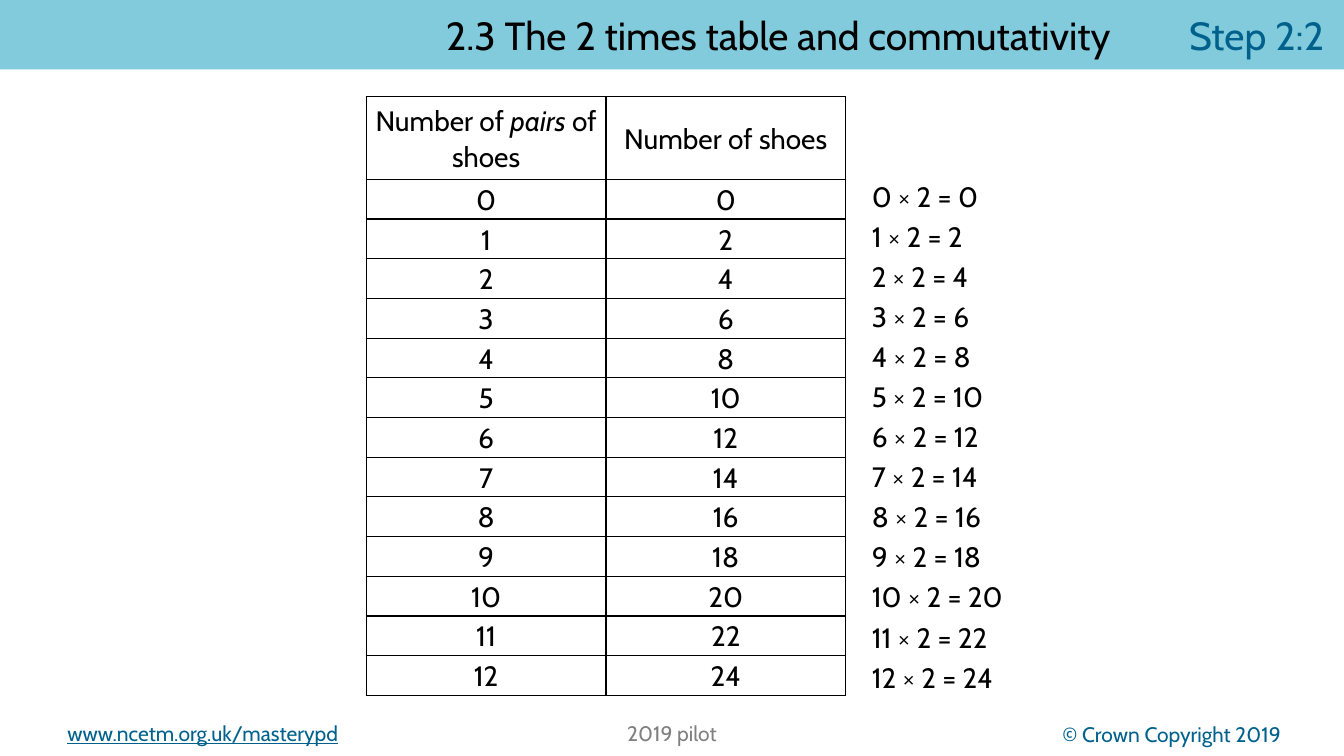
"""Build the slide on the 2 times table and commutativity."""
from dataclasses import dataclass

from lxml import etree
from pptx import Presentation
from pptx import util as u
from pptx.dml.color import RGBColor
from pptx.enum import text
from pptx.oxml import ns

BLACK = RGBColor(0x00, 0x00, 0x00)
BLUE = RGBColor(0x00, 0x62, 0x8C)
GREY = RGBColor(0x80, 0x80, 0x80)
SKY = RGBColor(0x82, 0xCB, 0xDD)
FACE = "Cabin"
FACTOR = 2
LAST = 12
ALIGN = text.PP_ALIGN
MIDDLE = text.MSO_ANCHOR.MIDDLE


@dataclass(frozen=True)
class Span:
    words: str
    color: RGBColor = BLACK
    slant: bool | None = None


@dataclass(frozen=True)
class Label:
    words: str
    left: float
    top: float
    width: float
    height: float
    size: float = 20
    color: RGBColor = BLACK
    align: text.PP_ALIGN = ALIGN.LEFT
    line: bool = False
    wrap: bool = True


FOOTERS = [
    Label("© Crown Copyright 2019", 22.28, 18.06, 10.25, 0.89, 15, BLUE, ALIGN.RIGHT),
    Label("www.ncetm.org.uk/masterypd", 1.45, 18.03, 10.41, 0.89, 15, BLUE, line=True),
    Label("2019 pilot", 11.73, 18.03, 10.41, 0.89, 15, GREY, ALIGN.CENTER),
]
HEADS = [
    [Span("Number of "), Span("pairs", slant=True), Span(" of shoes")],
    [Span("Number of shoes")],
]


def style(para, size: float, color: RGBColor, align: text.PP_ALIGN) -> None:
    """Set the font and alignment of a paragraph."""
    para.alignment = align
    para.font.name = FACE
    para.font.size = u.Pt(size)
    para.font.color.rgb = color


def add_spans(para, spans: list[Span]) -> None:
    """Add runs, marking only those that differ from the paragraph."""
    for span in spans:
        run = para.add_run()
        run.text = span.words
        if span.color != BLACK:
            run.font.color.rgb = span.color
        if span.slant:
            run.font.italic = True


def add_label(slide, label: Label) -> None:
    """Draw one line of text in its own box."""
    box = slide.shapes.add_textbox(
        u.Cm(label.left), u.Cm(label.top), u.Cm(label.width), u.Cm(label.height))
    frame = box.text_frame
    frame.word_wrap = label.wrap
    frame.auto_size = text.MSO_AUTO_SIZE.SHAPE_TO_FIT_TEXT
    para = frame.paragraphs[0]
    para.text = label.words
    style(para, label.size, label.color, label.align)
    if label.line:
        para.font.underline = True


def set_title(slide) -> None:
    """Turn the title into a band across the top."""
    title = slide.shapes.title
    title.left, title.top = u.Cm(0), u.Cm(0)
    title.width, title.height = u.Cm(33.87), u.Cm(1.75)
    title.fill.solid()
    title.fill.fore_color.rgb = SKY
    frame = title.text_frame
    frame.word_wrap = True
    frame.auto_size = text.MSO_AUTO_SIZE.NONE
    frame.vertical_anchor = MIDDLE
    frame.margin_left = frame.margin_right = u.Cm(0.5)
    frame.margin_top = frame.margin_bottom = u.Cm(0.13)
    para = frame.paragraphs[0]
    add_spans(para, [
        Span("2.3 The 2 times table and commutativity\t"), Span("Step 2:2", BLUE)])
    stops = etree.SubElement(para._p.get_or_add_pPr(), ns.qn("a:tabLst"))
    etree.SubElement(stops, ns.qn("a:tab"), pos=str(u.Cm(18.73)), algn="l")
    style(para, 28, BLACK, ALIGN.RIGHT)


def add_edges(cell) -> None:
    """Draw thin black lines on all four sides of a cell."""
    props = cell._tc.get_or_add_tcPr()
    for side in ("lnL", "lnR", "lnT", "lnB"):
        edge = etree.SubElement(props, ns.qn(f"a:{side}"), w=str(u.Pt(1)))
        fill = etree.SubElement(edge, ns.qn("a:solidFill"))
        etree.SubElement(fill, ns.qn("a:srgbClr"), val=str(BLACK))


def fill_cell(cell, spans: list[Span]) -> None:
    """Write and format one table cell."""
    add_edges(cell)
    cell.fill.background()
    cell.vertical_anchor = MIDDLE
    cell.margin_left = cell.margin_right = u.Cm(0.18)
    cell.margin_top = cell.margin_bottom = u.Cm(0)
    para = cell.text_frame.paragraphs[0]
    add_spans(para, spans)
    para.line_spacing = 1.07
    style(para, 20, BLACK, ALIGN.CENTER)


def add_grid(slide) -> None:
    """Draw the table of pairs and shoes."""
    rows = HEADS, *([[Span(str(n))], [Span(str(n * FACTOR))]] for n in range(LAST + 1))
    table = slide.shapes.add_table(
        len(rows), len(HEADS), u.Cm(9.23), u.Cm(2.44), u.Cm(12.08), u.Cm(15.08)).table
    table.first_row = table.horz_banding = False
    for col in table.columns:
        col.width = u.Cm(6.04)
    for i, row in enumerate(rows):
        table.rows[i].height = u.Cm(1 if i else 2.08)
        for j, spans in enumerate(row):
            fill_cell(table.cell(i, j), spans)


def add_sums(slide) -> None:
    """Write one product beside each row of the table."""
    for n in range(LAST + 1):
        words = f"{n} × {FACTOR} = {n * FACTOR}"
        width = 3.4 + 0.4 * (len(words) - 9)
        add_label(slide, Label(words, 21.72, 4.39 + 1.01 * n, width, 1.12, wrap=False))


def main() -> None:
    """Build and save the deck."""
    deck = Presentation()
    deck.slide_width, deck.slide_height = u.Cm(33.87), u.Cm(19.05)
    slide = deck.slides.add_slide(deck.slide_layouts[5])
    set_title(slide)
    for label in FOOTERS:
        add_label(slide, label)
    add_grid(slide)
    add_sums(slide)
    deck.save("out.pptx")


if __name__ == "__main__":
    main()
